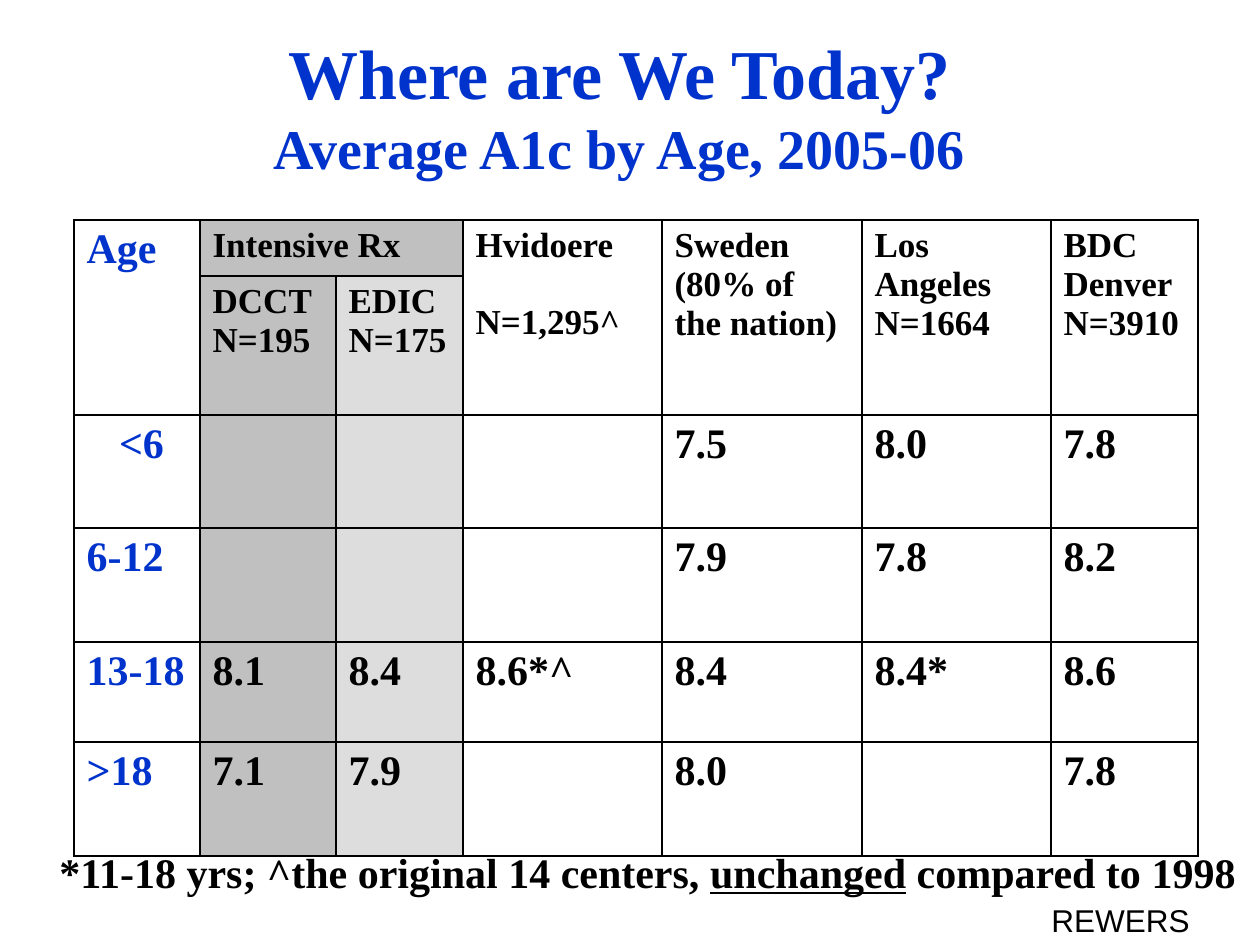
from typing import NamedTuple

from lxml import etree
from pptx import Presentation
from pptx import util as u
from pptx.dml.color import RGBColor
from pptx.enum import text
from pptx.oxml.ns import qn

PX = 914400 / 126  # EMU per px
BLUE = RGBColor(0x00, 0x33, 0xCC)
BLACK = RGBColor(0, 0, 0)
SILVER = RGBColor(0xC0, 0xC0, 0xC0)
PALE = RGBColor(0xDD, 0xDD, 0xDD)
SERIF, SANS = "Times New Roman", "Arial"


class Box(NamedTuple):
    x: int
    y: int
    w: int
    h: int


class Header(NamedTuple):
    row: int
    col: int
    rows: int
    cols: int
    label: str


TITLE = Box(84, 42, 1071, 126)
TABLE = Box(74, 220, 1124, 636)
NOTE = Box(47, 840, 1213, 63)
CREDIT = Box(1039, 895, 221, 50)

COLS = [126, 136, 127, 199, 200, 189, 147]
ROWS = [56, 139, 113, 114, 100, 114]
FILLS = {1: SILVER, 2: PALE}  # shaded columns
HEADERS = [
    Header(0, 0, 2, 1, "Age"),
    Header(0, 1, 1, 2, "Intensive Rx"),
    Header(0, 3, 2, 1, "Hvidoere\nN=1,295^"),
    Header(0, 4, 2, 1, "Sweden\n(80% of the nation)"),
    Header(0, 5, 2, 1, "Los Angeles\nN=1664"),
    Header(0, 6, 2, 1, "BDC\nDenver\nN=3910"),
    Header(1, 1, 1, 1, "DCCT\nN=195"),
    Header(1, 2, 1, 1, "EDIC\nN=175"),
]
DATA = [
    ["<6", "", "", "", "7.5", "8.0", "7.8"],
    ["6-12", "", "", "", "7.9", "7.8", "8.2"],
    ["13-18", "8.1", "8.4", "8.6*^", "8.4", "8.4*", "8.6"],
    [">18", "7.1", "7.9", "", "8.0", "", "7.8"],
]


def px(n: int) -> u.Emu:
    return u.Emu(round(n * PX))


def emu(box: Box) -> list:
    return [px(n) for n in box]


def style(r, size: int, color: RGBColor, font: str = SERIF, bold: bool = True) -> None:
    r.font.size, r.font.name, r.font.bold = u.Pt(size), font, bold
    r.font.color.rgb = color


def write(tf, label: str, size: int, color: RGBColor) -> None:
    tf.text = label
    for p in tf.paragraphs:
        for r in p.runs:
            style(r, size, color)


def add_borders(cell) -> None:
    tcPr = cell._tc.get_or_add_tcPr()
    for i, side in enumerate(("a:lnL", "a:lnR", "a:lnT", "a:lnB")):
        ln = etree.Element(qn(side), w=str(u.Pt(1)))
        fill = etree.SubElement(ln, qn("a:solidFill"))
        etree.SubElement(fill, qn("a:srgbClr"), val=str(BLACK))
        tcPr.insert(i, ln)


def add_table(s) -> None:
    table = s.shapes.add_table(len(ROWS), len(COLS), *emu(TABLE)).table
    table.first_row = table.horz_banding = False
    for column, width in zip(table.columns, COLS):
        column.width = px(width)
    for row, height in zip(table.rows, ROWS):
        row.height = px(height)

    # Shading and grid
    for row in table.rows:
        for col, cell in enumerate(row.cells):
            if col in FILLS:
                cell.fill.solid()
                cell.fill.fore_color.rgb = FILLS[col]
            else:
                cell.fill.background()
            add_borders(cell)

    # Two-level header
    for h in HEADERS:
        cell = table.cell(h.row, h.col)
        if h.rows * h.cols > 1:
            cell.merge(table.cell(h.row + h.rows - 1, h.col + h.cols - 1))
        size, color = (20, BLACK) if h.col else (24, BLUE)
        write(cell.text_frame, h.label, size, color)
    table.cell(0, 3).text_frame.paragraphs[1].space_before = u.Pt(22)

    # Values by age group
    for row, values in enumerate(DATA, start=2):
        for col, value in enumerate(values):
            if value:
                write(table.cell(row, col).text_frame, value, 24, BLACK if col else BLUE)
    table.cell(2, 0).margin_left = px(45)


def main() -> None:
    prs = Presentation()
    prs.slide_width, prs.slide_height = u.Inches(10), u.Inches(7.5)
    s = prs.slides.add_slide(prs.slide_layouts[5])

    # Title
    sp = s.shapes.title
    sp.left, sp.top, sp.width, sp.height = emu(TITLE)
    tf = sp.text_frame
    tf.text = "Where are We Today?\vAverage A1c by Age, 2005-06"
    tf.vertical_anchor = text.MSO_ANCHOR.MIDDLE
    p = tf.paragraphs[0]
    p.alignment = text.PP_ALIGN.CENTER
    for r, size in zip(p.runs, (40, 32)):
        style(r, size, BLUE)

    add_table(s)

    # Footnote
    tf = s.shapes.add_textbox(*emu(NOTE)).text_frame
    tf.word_wrap = False
    tf.vertical_anchor = text.MSO_ANCHOR.MIDDLE
    p = tf.paragraphs[0]
    for part in ("*11-18 yrs; ^the original 14 centers, ", "unchanged", " compared to 1998"):
        r = p.add_run()
        r.text = part
        style(r, 24, BLACK)
    p.runs[1].font.underline = True

    # Credit
    tf = s.shapes.add_textbox(*emu(CREDIT)).text_frame
    tf.word_wrap = True
    tf.text = "REWERS"
    style(tf.paragraphs[0].runs[0], 18, BLACK, SANS, bold=False)

    prs.save("out.pptx")


if __name__ == "__main__":
    main()
